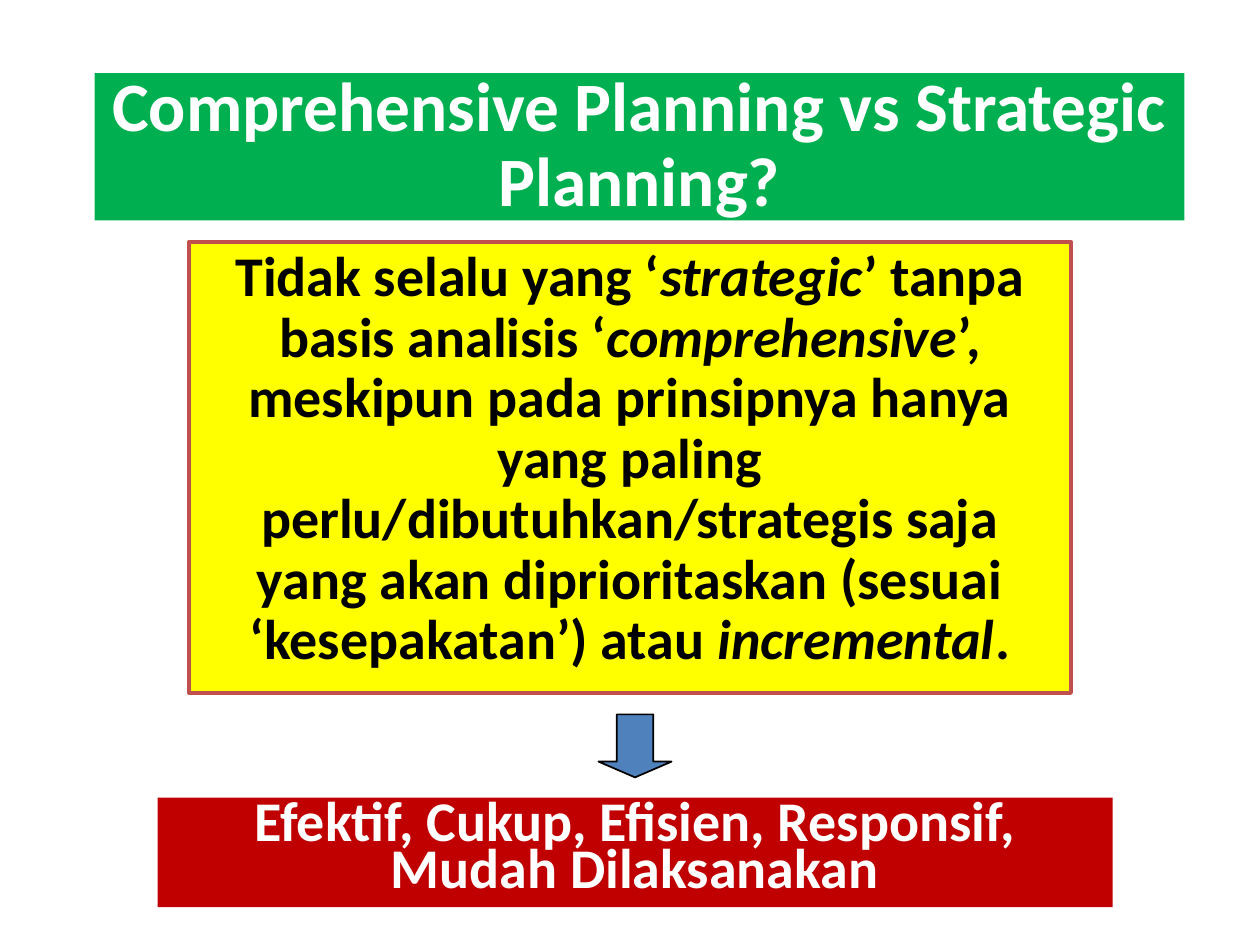
import pptx
import pptx.util
import pptx.dml.color
import pptx.enum.shapes
import pptx.enum.text

Inches = pptx.util.Inches
Pt = pptx.util.Pt
MSO_SHAPE = pptx.enum.shapes.MSO_SHAPE
MSO_ANCHOR = pptx.enum.text.MSO_ANCHOR

COLORS = {
    "title": "00B050",
    "body": "FFFF00",
    "body_line": "C0504D",
    "result": "C00000",
    "arrow": "4F81BD",
    "dark": "000000",
    "light": "FFFFFF",
}


def rgb(name):
    return pptx.dml.color.RGBColor.from_string(COLORS[name])


def place(shape, left, top, width, height):
    shape.left, shape.top = Inches(left), Inches(top)
    shape.width, shape.height = Inches(width), Inches(height)


def paint(shape, fill, line=None, line_width=1):
    shape.fill.solid()
    shape.fill.fore_color.rgb = rgb(fill)
    if line:
        shape.line.color.rgb = rgb(line)
        shape.line.width = Pt(line_width)
    else:
        shape.line.fill.background()


def write(shape, runs, size, color, line_spacing, anchor):
    """Write one centred bold paragraph from (text, italic) runs."""
    frame = shape.text_frame
    frame.word_wrap = True
    frame.auto_size = pptx.enum.text.MSO_AUTO_SIZE.NONE
    frame.vertical_anchor = anchor
    paragraph = frame.paragraphs[0]
    paragraph.alignment = pptx.enum.text.PP_ALIGN.CENTER
    paragraph.line_spacing = line_spacing
    paragraph.space_before = Pt(0)
    paragraph.font.name = "Calibri"
    paragraph.font.size = Pt(size)
    paragraph.font.bold = True
    paragraph.font.color.rgb = rgb(color)
    for text, italic in runs:
        run = paragraph.add_run()
        run.text = text
        if italic:
            run.font.italic = True


def add_shape(slide, kind, left, top, width, height):
    shape = slide.shapes.add_shape(
        kind, Inches(left), Inches(top), Inches(width), Inches(height))
    shape.shadow.inherit = False
    return shape


def main():
    presentation = pptx.Presentation()
    presentation.slide_width = Inches(10)
    presentation.slide_height = Inches(7.5)
    slide = presentation.slides.add_slide(presentation.slide_layouts[0])

    # Title band
    title = slide.shapes.title
    place(title, 0.75, 0.58, 8.65, 1.17)
    paint(title, "title")
    write(title, [("Comprehensive Planning vs Strategic Planning?", False)],
          39.6, "light", 0.9, MSO_ANCHOR.MIDDLE)

    # Statement box
    body = slide.placeholders[1]
    place(body, 1.5, 1.92, 7, 3.58)
    paint(body, "body", "body_line", 2.25)
    write(body, [
        ("Tidak selalu yang ‘", False),
        ("strategic", True),
        ("’ tanpa basis analisis ‘", False),
        ("comprehensive", True),
        ("’, meskipun pada prinsipnya hanya yang paling "
         "perlu/dibutuhkan/strategis saja yang akan diprioritaskan "
         "(sesuai ‘kesepakatan’) atau ", False),
        ("incremental", True),
        (".", False),
    ], 32, "dark", 0.9, MSO_ANCHOR.TOP)

    # Result band
    result = add_shape(slide, MSO_SHAPE.RECTANGLE, 1.25, 6.33, 7.58, 0.87)
    paint(result, "result")
    write(result,
          [("Efektif, Cukup, Efisien, Responsif, Mudah Dilaksanakan", False)],
          32, "light", 0.7, MSO_ANCHOR.TOP)

    # Arrow from statement to result
    arrow = add_shape(slide, MSO_SHAPE.DOWN_ARROW, 4.75, 5.67, 0.58, 0.5)
    arrow.adjustments[0] = 0.5
    arrow.adjustments[1] = 0.25
    paint(arrow, "arrow", "dark")

    presentation.save("out.pptx")


if __name__ == "__main__":
    main()
